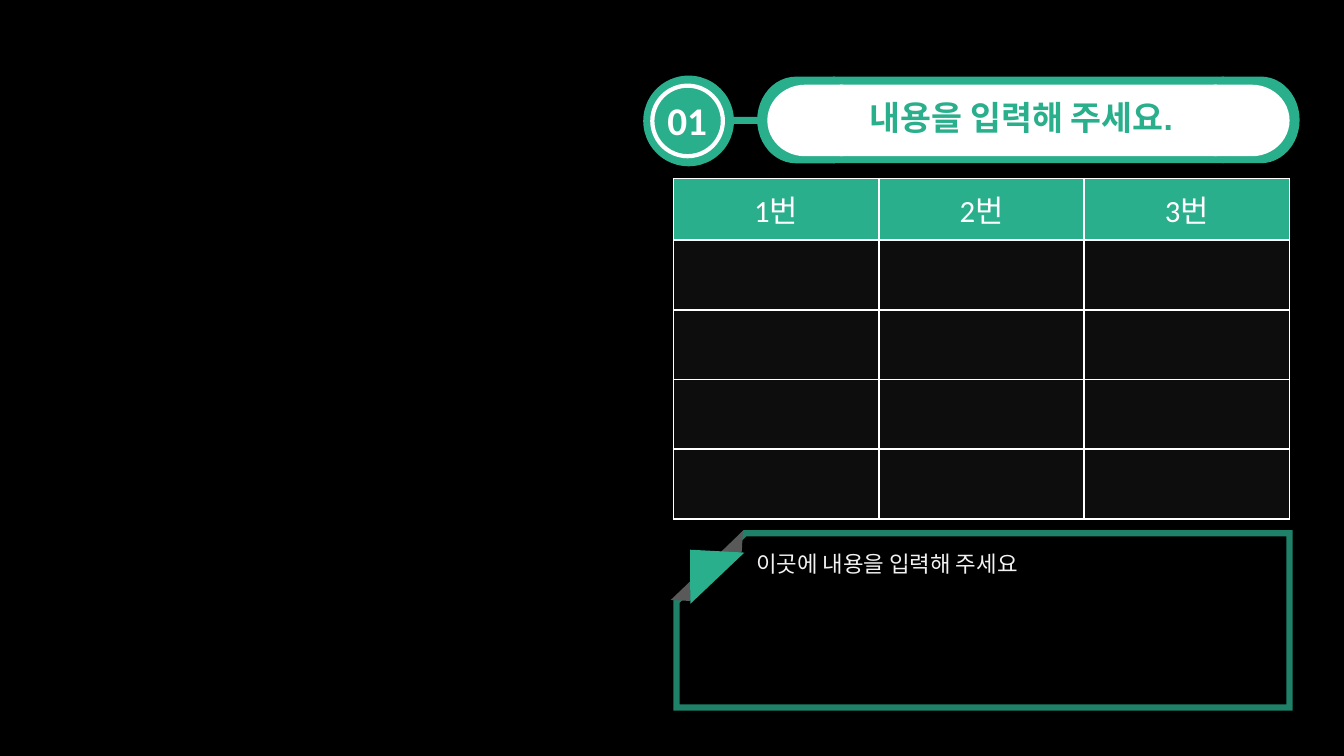
from lxml.etree import SubElement
from pptx import Presentation
from pptx.dml.color import RGBColor
from pptx.enum.shapes import MSO_SHAPE
from pptx.enum.text import MSO_ANCHOR, PP_ALIGN
from pptx.oxml.ns import qn
from pptx.util import Inches, Pt

GREEN, DARK_GREEN, GREY = "29AF8C", "1E8168", "595959"
WHITE, OFF_WHITE, BLACK, CELL = "FFFFFF", "F2F2F2", "000000", "0D0D0D"


def color(hex_value):
    return RGBColor.from_string(hex_value)


def add_part(slide, kind, box, fill=None, line=None, width=0, rotation=0, flip=False):
    part = slide.shapes.add_shape(kind, *map(Inches, box))
    part.shadow.inherit = False
    part.rotation = rotation
    if fill:
        part.fill.solid()
        part.fill.fore_color.rgb = color(fill)
    else:
        part.fill.background()
    if line:
        part.line.color.rgb = color(line)
        part.line.width = Pt(width)
        SubElement(part.line._get_or_add_ln(), qn("a:miter"), lim="800000")
    else:
        part.line.fill.background()
    if flip:
        part._element.spPr.find(qn("a:xfrm")).set("flipH", "1")
    return part


def write(frame, text, font, align=PP_ALIGN.LEFT):
    paragraph = frame.paragraphs[0]
    paragraph.alignment = align
    run = paragraph.add_run()
    run.text = text
    for name, value in font.items():
        if name == "color":
            run.font.color.rgb = color(value)
        else:
            setattr(run.font, name, value)


def add_label(slide, box, text, font, align=PP_ALIGN.LEFT):
    label = slide.shapes.add_textbox(*map(Inches, box))
    label.text_frame.word_wrap = True
    write(label.text_frame, text, font, align)


def style_cell(cell, fill, borders):
    properties = cell._tc.get_or_add_tcPr()
    for side, width in borders.items():
        edge = SubElement(properties, qn(f"a:ln{side}"), w=str(Pt(width)))
        SubElement(SubElement(edge, qn("a:solidFill")), qn("a:srgbClr"), val=WHITE)
    cell.fill.solid()
    cell.fill.fore_color.rgb = color(fill)


def add_grid(slide, box, headings, body_rows, header_height):
    height = box[3]
    grid = slide.shapes.add_table(body_rows + 1, len(headings), *map(Inches, box)).table
    last = len(headings) - 1
    for row_index, row in enumerate(grid.rows):
        is_header = row_index == 0
        row.height = Inches(header_height if is_header else (height - header_height) / body_rows)
        for column, cell in enumerate(row.cells):
            borders = dict.fromkeys("LRTB", 1.5)
            if is_header:
                borders["T"] = 1
                if column == 0:
                    borders["L"] = 1
                if column == last:
                    borders["R"] = 1
            style_cell(cell, GREEN if is_header else CELL, borders)
            cell.vertical_anchor = MSO_ANCHOR.MIDDLE
            if is_header:
                font = {"name": "Calibri", "size": Pt(22), "color": WHITE}
                write(cell.text_frame, headings[column], font, PP_ALIGN.CENTER)


def add_note(slide, box, text):
    left, top, width, height = box
    # Frame with a cut corner
    frame = add_part(slide, MSO_SHAPE.SNIP_1_RECTANGLE, box,
                     line=DARK_GREEN, width=4.5, flip=True)
    frame.adjustments[0] = 0.392
    # Folded corner
    fold = add_part(slide, MSO_SHAPE.DIAGONAL_STRIPE, (left - 0.04, top - 0.04, 0.68, 0.72),
                    fill=GREY, rotation=182.9)
    fold.adjustments[0] = 0.72
    add_part(slide, MSO_SHAPE.ISOSCELES_TRIANGLE, (left - 0.1, top + 0.11, 0.74, 0.39),
             fill=GREEN, rotation=316.5)
    font = {"name": "Calibri", "size": Pt(16), "color": OFF_WHITE}
    add_label(slide, (left + 0.69, top + 0.12, width - 0.83, 0.37), text, font)


def add_pill(slide, box, cap, overlap, fill):
    left, top, width, height = box
    add_part(slide, MSO_SHAPE.FLOWCHART_DELAY, (left + width - cap, top, cap, height), fill=fill)
    add_part(slide, MSO_SHAPE.RECTANGLE,
             (left + cap - overlap, top, width - 2 * (cap - overlap), height), fill=fill)
    add_part(slide, MSO_SHAPE.FLOWCHART_DELAY, (left, top, cap, height), fill=fill, rotation=180)


def add_heading(slide, box, number, title):
    left, top, width, height = box
    # Link and title pill
    add_part(slide, MSO_SHAPE.FLOWCHART_TERMINATOR, (left + 0.57, top + 0.41, 0.78, 0.07), fill=GREEN)
    pill_left, pill_width = left + 1.13, width - 1.13
    add_pill(slide, (pill_left, top + 0.01, pill_width, 0.86), 0.77, 0.02, GREEN)
    add_pill(slide, (pill_left + 0.1, top + 0.09, pill_width - 0.2, 0.71), 0.75, 0.03, WHITE)
    # Number badge
    add_part(slide, MSO_SHAPE.OVAL, (left, top, height, height), fill=GREEN)
    add_part(slide, MSO_SHAPE.OVAL, (left + 0.09, top + 0.1, 0.7, 0.7), line=WHITE, width=3)
    # Wording
    title_font = {"name": "Arial", "size": Pt(24), "bold": True, "color": GREEN}
    number_font = {"name": "Calibri", "size": Pt(28), "bold": True, "color": WHITE}
    add_label(slide, (left + 1.36, top + 0.16, 4.78, 0.5), title, title_font, PP_ALIGN.CENTER)
    add_label(slide, (left + 0.09, top + 0.16, 0.69, 0.57), number, number_font, PP_ALIGN.CENTER)


def main():
    deck = Presentation()
    deck.slide_width, deck.slide_height = Inches(13.33), Inches(7.5)
    slide = deck.slides.add_slide(deck.slide_layouts[6])
    slide.background.fill.solid()
    slide.background.fill.fore_color.rgb = color(BLACK)

    add_grid(slide, (6.68, 1.77, 6.11, 3.38), ["1번", "2번", "3번"], 4, 0.61)
    add_note(slide, (6.71, 5.29, 6.08, 1.73), "이곳에 내용을 입력해 주세요")
    add_heading(slide, (6.38, 0.75, 6.51, 0.9), "01", "내용을 입력해 주세요.")
    deck.save("out.pptx")


if __name__ == "__main__":
    main()
